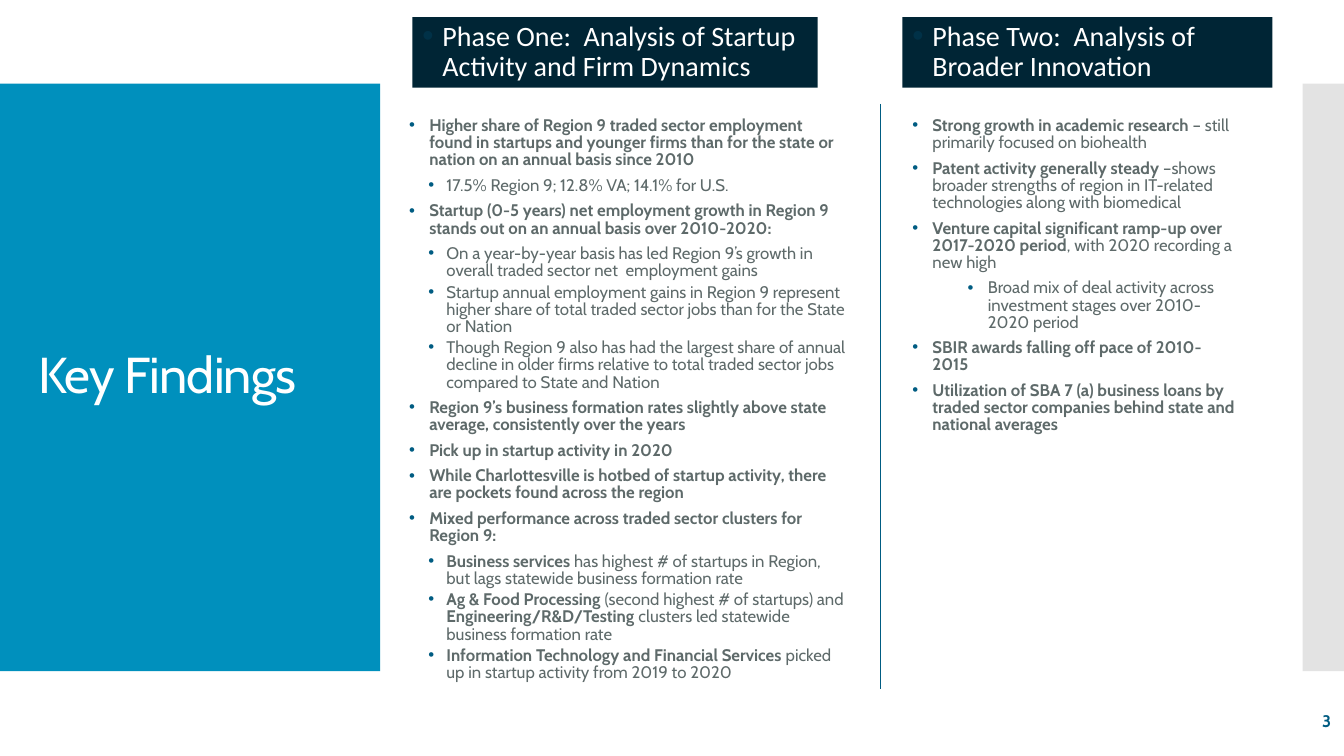
from lxml import etree
from pptx import Presentation
from pptx.dml.color import RGBColor
from pptx.enum.shapes import MSO_CONNECTOR, MSO_SHAPE
from pptx.enum.text import MSO_ANCHOR, PP_ALIGN
from pptx.oxml.ns import qn
from pptx.util import Inches, Pt

RECTANGLE = MSO_SHAPE.RECTANGLE
STRAIGHT = MSO_CONNECTOR.STRAIGHT
TOP, MIDDLE = MSO_ANCHOR.TOP, MSO_ANCHOR.MIDDLE
LEFT, RIGHT = PP_ALIGN.LEFT, PP_ALIGN.RIGHT

WHITE = RGBColor(0xFF, 0xFF, 0xFF)
SKY = RGBColor(0x00, 0x90, 0xBD)
SILVER = RGBColor(0xC8, 0xC8, 0xC8)
NAVY = RGBColor(0x00, 0x25, 0x35)
HEADING_BULLET = RGBColor(0x00, 0x31, 0x47)
TEAL = RGBColor(0x00, 0x5C, 0x82)
SLATE = RGBColor(0x5E, 0x6A, 0x6A)

BOLD, PLAIN = True, False
# Outline level, left margin and hanging indent in inches
MAIN = (0, 0.2, -0.2)
SUB = (1, 0.37, -0.18)
DEEP = (1, 0.75, -0.2)
WIDE_GAP, TIGHT_GAP = 6, 3

TITLE = "Key Findings"
PAGE_NUMBER = "3"

# Each finding: outline style, space after in points, runs
PHASE_ONE = [
    (MAIN, WIDE_GAP, [("Higher share of Region 9 traded sector employment found in startups and "
                       "younger firms than for the state or nation on an annual basis since 2010", BOLD)]),
    (SUB, WIDE_GAP, [("17.5% Region 9; 12.8% VA; 14.1% for U.S.", PLAIN)]),
    (MAIN, WIDE_GAP, [("Startup (0-5 years) net employment growth in Region 9 stands out on an "
                       "annual basis over 2010-2020:", BOLD)]),
    (SUB, TIGHT_GAP, [("On a year-by-year basis has led Region 9’s growth in overall traded sector "
                       "net  employment gains", PLAIN)]),
    (SUB, TIGHT_GAP, [("Startup annual employment gains in Region 9 represent higher share of total "
                       "traded sector jobs than for the State or Nation", PLAIN)]),
    (SUB, WIDE_GAP, [("Though Region 9 also has had the largest share of annual decline in older firms "
                      "relative to total traded sector jobs compared to State and Nation", PLAIN)]),
    (MAIN, WIDE_GAP, [("Region 9’s business formation rates slightly above state average, "
                       "consistently over the years", BOLD)]),
    (MAIN, WIDE_GAP, [("Pick up in startup activity in 2020", BOLD)]),
    (MAIN, WIDE_GAP, [("While Charlottesville is hotbed of startup activity, there are pockets found "
                       "across the region", BOLD)]),
    (MAIN, WIDE_GAP, [("Mixed performance across traded sector clusters for Region 9:", BOLD)]),
    (SUB, TIGHT_GAP, [("Business services ", BOLD),
                      ("has highest # of startups in Region, but lags statewide business "
                       "formation rate", PLAIN)]),
    (SUB, TIGHT_GAP, [("Ag & Food Processing ", BOLD),
                      ("(second highest # of startups) and ", PLAIN),
                      ("Engineering/R&D/Testing ", BOLD),
                      ("clusters led statewide business formation rate", PLAIN)]),
    (SUB, TIGHT_GAP, [("Information Technology and Financial Services ", BOLD),
                      ("picked up in startup activity from 2019 to 2020", PLAIN)]),
]
PHASE_TWO = [
    (MAIN, WIDE_GAP, [("Strong growth in academic research ", BOLD),
                      ("– still primarily focused on biohealth", PLAIN)]),
    (MAIN, WIDE_GAP, [("Patent activity generally steady ", BOLD),
                      ("–shows broader strengths of region in IT-related technologies along with "
                       "biomedical", PLAIN)]),
    (MAIN, WIDE_GAP, [("Venture capital significant ramp-up over 2017-2020 period", BOLD),
                      (", with 2020 recording a new high", PLAIN)]),
    (DEEP, WIDE_GAP, [("Broad mix of deal activity across investment stages over 2010-2020 period", PLAIN)]),
    (MAIN, WIDE_GAP, [("SBIR awards falling off pace of 2010-2015", BOLD)]),
    (MAIN, WIDE_GAP, [("Utilization of SBA 7 (a) business loans by traded sector companies behind "
                       "state and national averages", BOLD)]),
]
# Heading, its left and width, findings, their left and width
PHASES = [
    ("Phase One:  Analysis of Startup Activity and Firm Dynamics", 4.09, 4.02, PHASE_ONE, 3.96, 4.54),
    ("Phase Two:  Analysis of Broader Innovation", 8.95, 3.67, PHASE_TWO, 8.95, 3.4),
]
HEADING_TOP, HEADING_HEIGHT = 0.17, 0.7
FINDINGS_TOP, FINDINGS_HEIGHT = 1.12, 6.3
PANEL_TOP, PANEL_HEIGHT = 0.83, 5.83

presentation = Presentation()
presentation.slide_width, presentation.slide_height = Inches(13.33), Inches(7.5)
slide = presentation.slides.add_slide(presentation.slide_layouts[6])


def add_panel(left, top, width, height, color):
    panel = slide.shapes.add_shape(RECTANGLE, Inches(left), Inches(top), Inches(width), Inches(height))
    panel.shadow.inherit = False
    panel.fill.solid()
    panel.fill.fore_color.rgb = color
    panel.line.fill.background()
    return panel


def add_text_frame(left, top, width, height, anchor):
    box = slide.shapes.add_textbox(Inches(left), Inches(top), Inches(width), Inches(height))
    box.text_frame.word_wrap = True
    box.text_frame.vertical_anchor = anchor
    return box.text_frame


def add_run(paragraph, words, size, font_name, color, bold=PLAIN):
    run = paragraph.add_run()
    run.text = words
    run.font.size, run.font.name, run.font.bold = Pt(size), font_name, bold
    run.font.color.rgb = color
    return run


def set_bullet(paragraph, style, color, percent=100):
    paragraph.level, margin, indent = style
    properties = paragraph._p.get_or_add_pPr()
    properties.set("marL", str(Inches(margin)))
    properties.set("indent", str(Inches(indent)))
    bullet_color = etree.SubElement(properties, qn("a:buClr"))
    etree.SubElement(bullet_color, qn("a:srgbClr"), val=str(color))
    etree.SubElement(properties, qn("a:buSzPct"), val=str(percent * 1000))
    etree.SubElement(properties, qn("a:buFont"), typeface="Arial")
    etree.SubElement(properties, qn("a:buChar"), char="•")


def add_heading(words, left, width):
    frame = add_panel(left, HEADING_TOP, width, HEADING_HEIGHT, NAVY).text_frame
    frame.word_wrap = True
    frame.vertical_anchor = TOP
    paragraph = frame.paragraphs[0]
    paragraph.alignment = LEFT
    paragraph.line_spacing = 0.9
    paragraph.space_before = Pt(12)
    set_bullet(paragraph, MAIN, HEADING_BULLET, 115)
    add_run(paragraph, words, 20, "Calibri", WHITE)


def add_findings(findings, left, width):
    frame = add_text_frame(left, FINDINGS_TOP, width, FINDINGS_HEIGHT, TOP)
    for index, (style, gap, runs) in enumerate(findings):
        paragraph = frame.add_paragraph() if index else frame.paragraphs[0]
        paragraph.line_spacing = 0.85
        paragraph.space_after = Pt(gap)
        set_bullet(paragraph, style, TEAL)
        for words, bold in runs:
            add_run(paragraph, words, 12, "Cabin", SLATE, bold)


add_panel(0, PANEL_TOP, 3.77, PANEL_HEIGHT, SKY)
side_strip = add_panel(12.92, PANEL_TOP, 0.41, PANEL_HEIGHT, SILVER)
strip_color = side_strip._element.spPr.find(qn("a:solidFill")).find(qn("a:srgbClr"))
etree.SubElement(strip_color, qn("a:alpha"), val="50000")

title = add_text_frame(0.28, 1.23, 3.22, 5.03, MIDDLE).paragraphs[0]
title.line_spacing = 0.9
title_run = add_run(title, TITLE, 36, "Cabin", WHITE)
title_run.font._element.set("spc", "-60")

for heading, heading_left, heading_width, findings, findings_left, findings_width in PHASES:
    add_findings(findings, findings_left, findings_width)
    add_heading(heading, heading_left, heading_width)

page_number = add_text_frame(11.63, 6.95, 1.67, 0.4, MIDDLE).paragraphs[0]
page_number.alignment = RIGHT
add_run(page_number, PAGE_NUMBER, 12, "Cabin", TEAL, BOLD)

divider = slide.shapes.add_connector(STRAIGHT, Inches(8.73), Inches(1.03), Inches(8.73), Inches(6.84))
divider.line.color.rgb = TEAL
divider.line.width = Pt(0.75)
etree.SubElement(divider._element.spPr, qn("a:effectLst"))

presentation.save("out.pptx")
